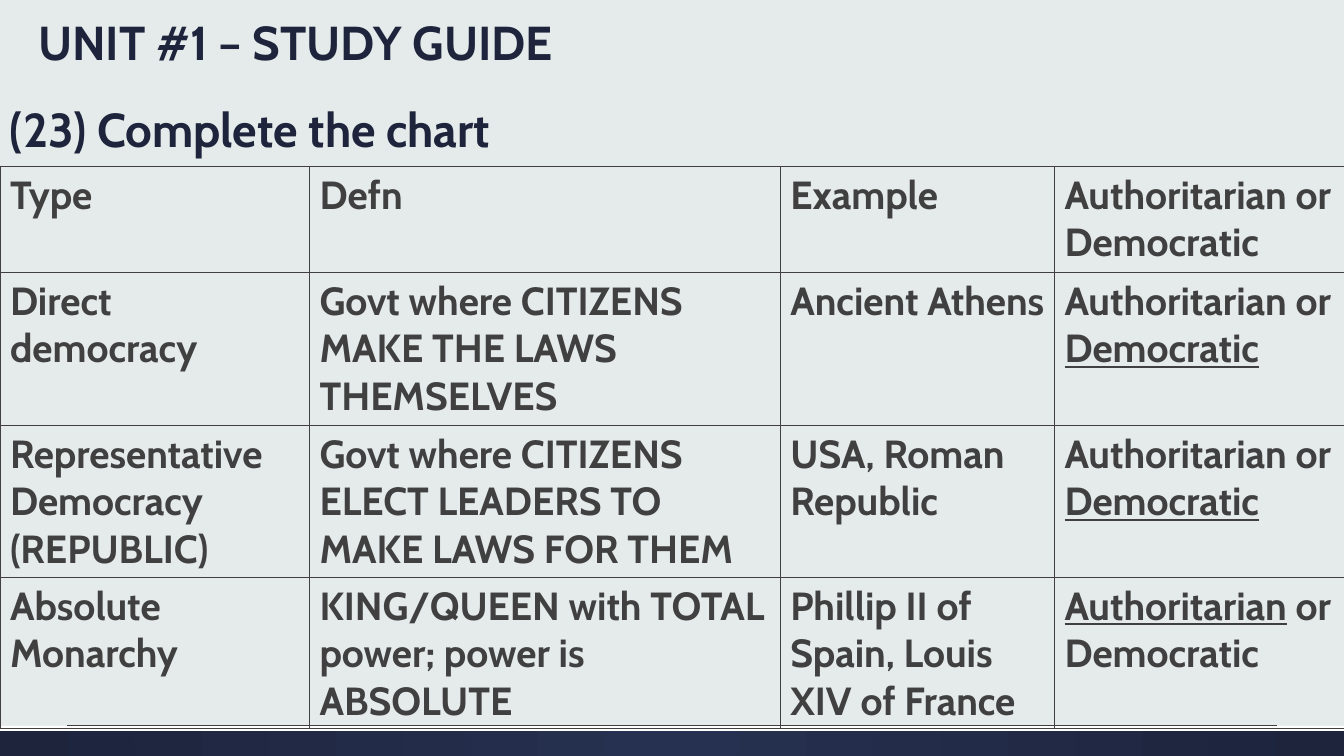
from lxml import etree
from pptx import Presentation
from pptx import util as u
from pptx.dml.color import RGBColor
from pptx.enum import shapes, text
from pptx.oxml import parse_xml
from pptx.oxml.ns import qn

INK = {"page": "E5EAEA", "navy": "1D243C", "glow": "263050",
       "white": "FFFFFF", "gray": "404040"}
NS = 'xmlns:a="http://schemas.openxmlformats.org/drawingml/2006/main"'


def color(name):
    return RGBColor.from_string(INK[name])


def write(frame, words, size=28, ink="gray", space=1.0):
    frame.word_wrap = True
    for i, line in enumerate(words.split("\n")):
        para = frame.paragraphs[0] if i == 0 else frame.add_paragraph()
        para.line_spacing = space
        for j, part in enumerate(line.split("_")):
            if part:
                run = para.add_run()
                run.text = part
                font = run.font
                font.name, font.size, font.bold = "Cabin", u.Pt(size), True
                font.color.rgb = color(ink)
                if j % 2:
                    font.underline = True


deck = Presentation()
deck.slide_width, deck.slide_height = u.Inches(13.33), u.Inches(7.5)
slide = deck.slides.add_slide(deck.slide_layouts[6])
slide.background.fill.solid()
slide.background.fill.fore_color.rgb = color("page")

for high, ink in [(0.3, "navy"), (0.05, "white")]:
    bar = slide.shapes.add_shape(shapes.MSO_SHAPE.RECTANGLE, 0, u.Inches(7.2),
                                 deck.slide_width, u.Inches(high))
    bar.shadow.inherit = False
    bar.line.fill.background()
    bar.fill.solid()
    bar.fill.fore_color.rgb = color(ink)
    if ink == "navy":
        solid = bar.fill.fore_color and bar.element.spPr.find(qn("a:solidFill"))
        glow = parse_xml(
            f'<a:gradFill {NS} rotWithShape="1"><a:gsLst>'
            f'<a:gs pos="0"><a:srgbClr val="{INK["glow"]}"/></a:gs>'
            f'<a:gs pos="100000"><a:srgbClr val="{INK["navy"]}"/></a:gs></a:gsLst>'
            '<a:path path="circle"><a:fillToRect l="50000" t="50000" r="50000" b="50000"/>'
            '</a:path></a:gradFill>')
        bar.element.spPr.replace(solid, glow)

rule = slide.shapes.add_connector(shapes.MSO_CONNECTOR.STRAIGHT, u.Inches(0.67),
                                  u.Inches(7.2), u.Inches(12.67), u.Inches(7.2))
rule.line.color.rgb = color("gray")
rule.line.width = u.Pt(0.75)
etree.SubElement(rule.element.spPr, qn("a:effectLst"))

for left, top, high, words in [(0, 0.96, 0.65, "(23) Complete the chart"),
                               (0.28, 0, 0.75, "UNIT #1 – STUDY GUIDE")]:
    box = slide.shapes.add_textbox(u.Inches(left), u.Inches(top),
                                   u.Inches(12.35), u.Inches(high))
    box.text_frame.vertical_anchor = text.MSO_ANCHOR.BOTTOM
    write(box.text_frame, words, size=34, ink="navy", space=0.9)

ROWS = [
    ("Type", "Defn", "Example", "Authoritarian or Democratic"),
    ("Direct democracy", "Govt where CITIZENS MAKE THE LAWS THEMSELVES",
     "Ancient Athens", "Authoritarian or _Democratic_"),
    ("Representative Democracy\n(REPUBLIC)",
     "Govt where CITIZENS ELECT LEADERS TO MAKE LAWS FOR THEM",
     "USA, Roman Republic", "Authoritarian or _Democratic_"),
    ("Absolute Monarchy", "KING/QUEEN with TOTAL power; power is ABSOLUTE",
     "Phillip II of Spain, Louis XIV of France", "_Authoritarian_ or Democratic"),
]
WIDE = [3.07, 4.67, 2.72, 2.88]
HIGH = [1.05, 1.52, 1.51, 1.5]
grid = slide.shapes.add_table(len(ROWS), len(WIDE), 0, u.Inches(1.65),
                              u.Inches(sum(WIDE)), u.Inches(sum(HIGH))).table
grid.first_row = grid.horz_banding = False
for col, wide in zip(grid.columns, WIDE):
    col.width = u.Inches(wide)
for row, high, words in zip(grid.rows, HIGH, ROWS):
    row.height = u.Inches(high)
    for cell, word in zip(row.cells, words):
        write(cell.text_frame, word)
        cell.fill.background()
        props = cell._tc.get_or_add_tcPr()
        for i, side in enumerate(["lnL", "lnR", "lnT", "lnB"]):
            props.insert(i, parse_xml(
                f'<a:{side} {NS} w="12700"><a:solidFill>'
                f'<a:srgbClr val="{INK["gray"]}"/></a:solidFill></a:{side}>'))

deck.save("out.pptx")
